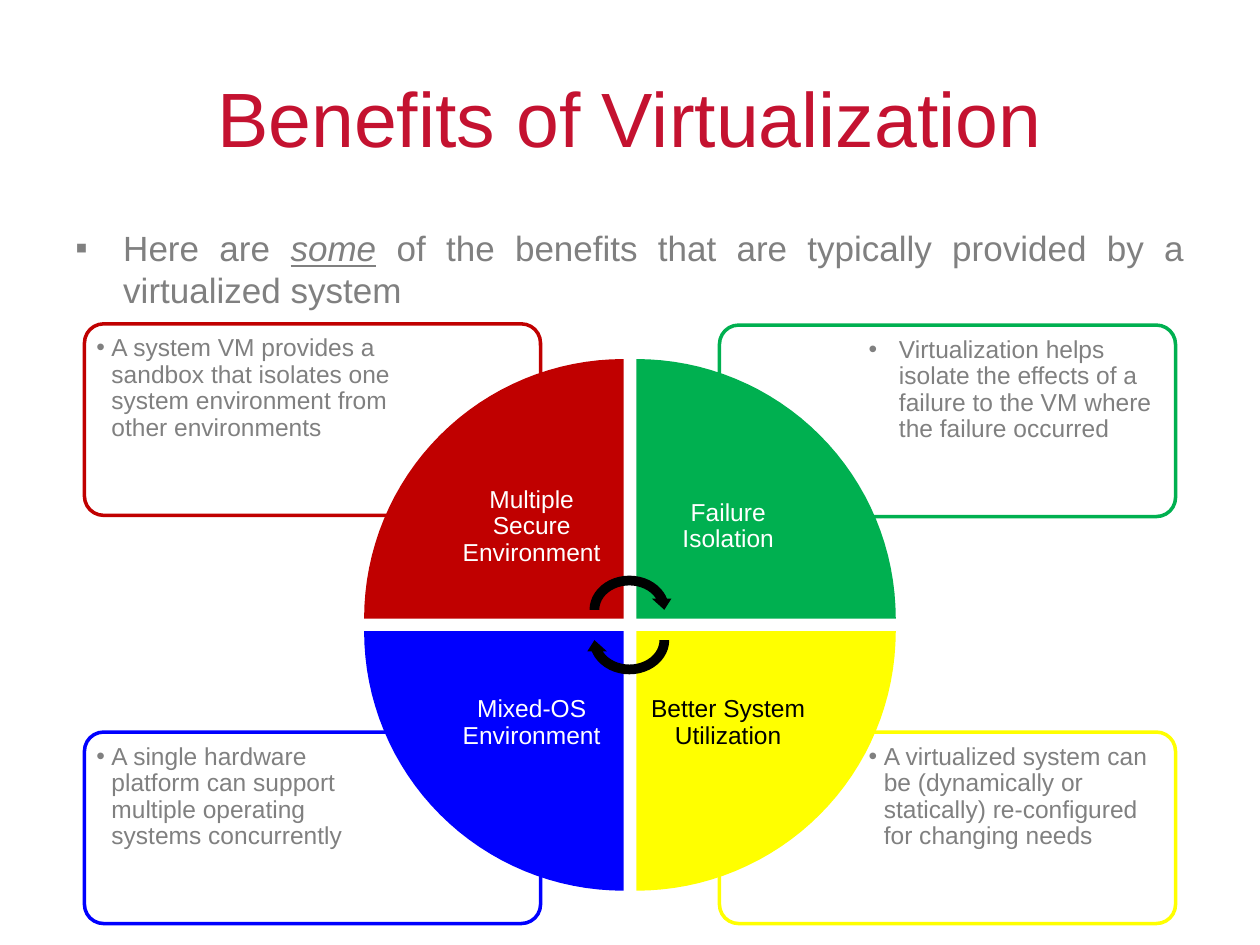
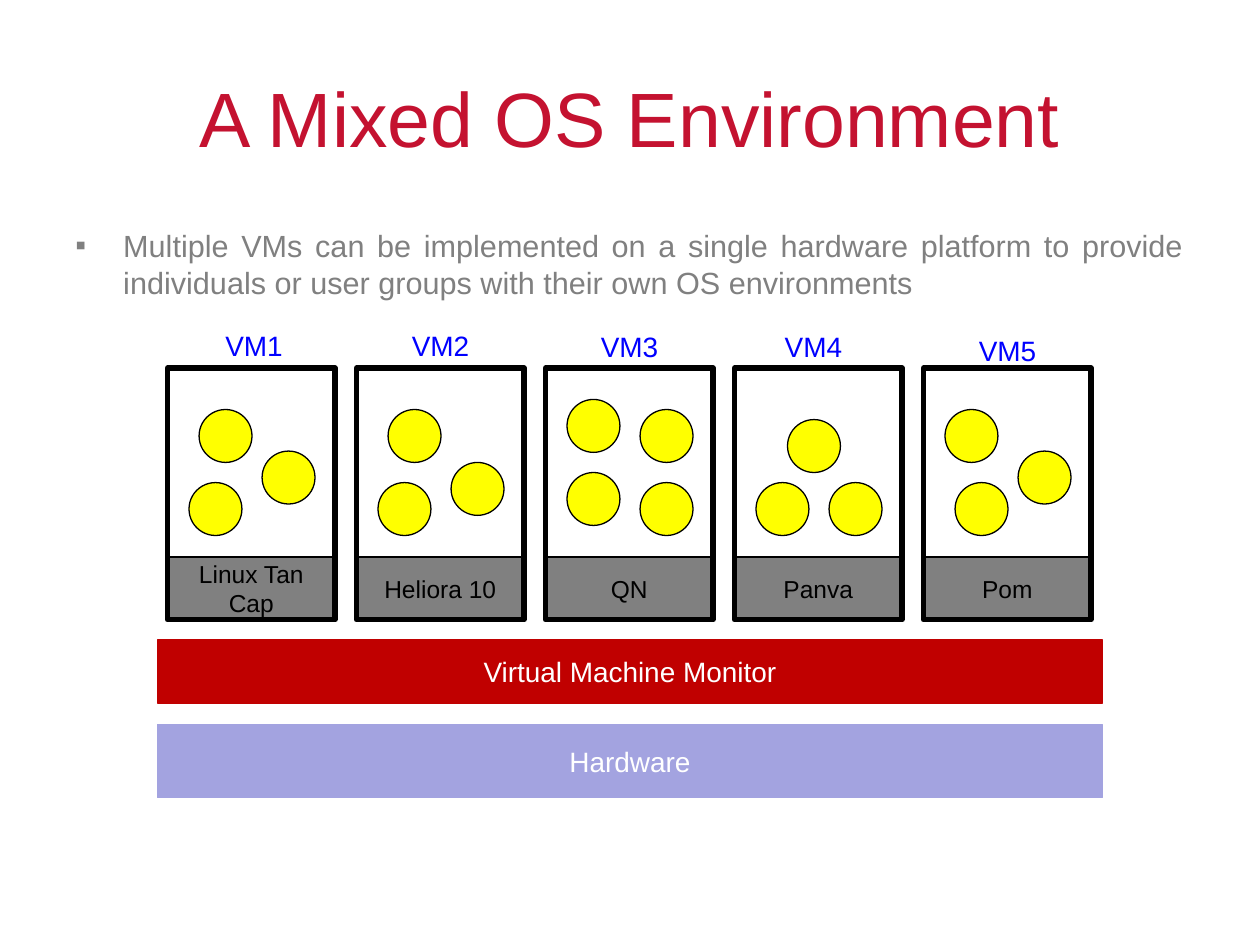
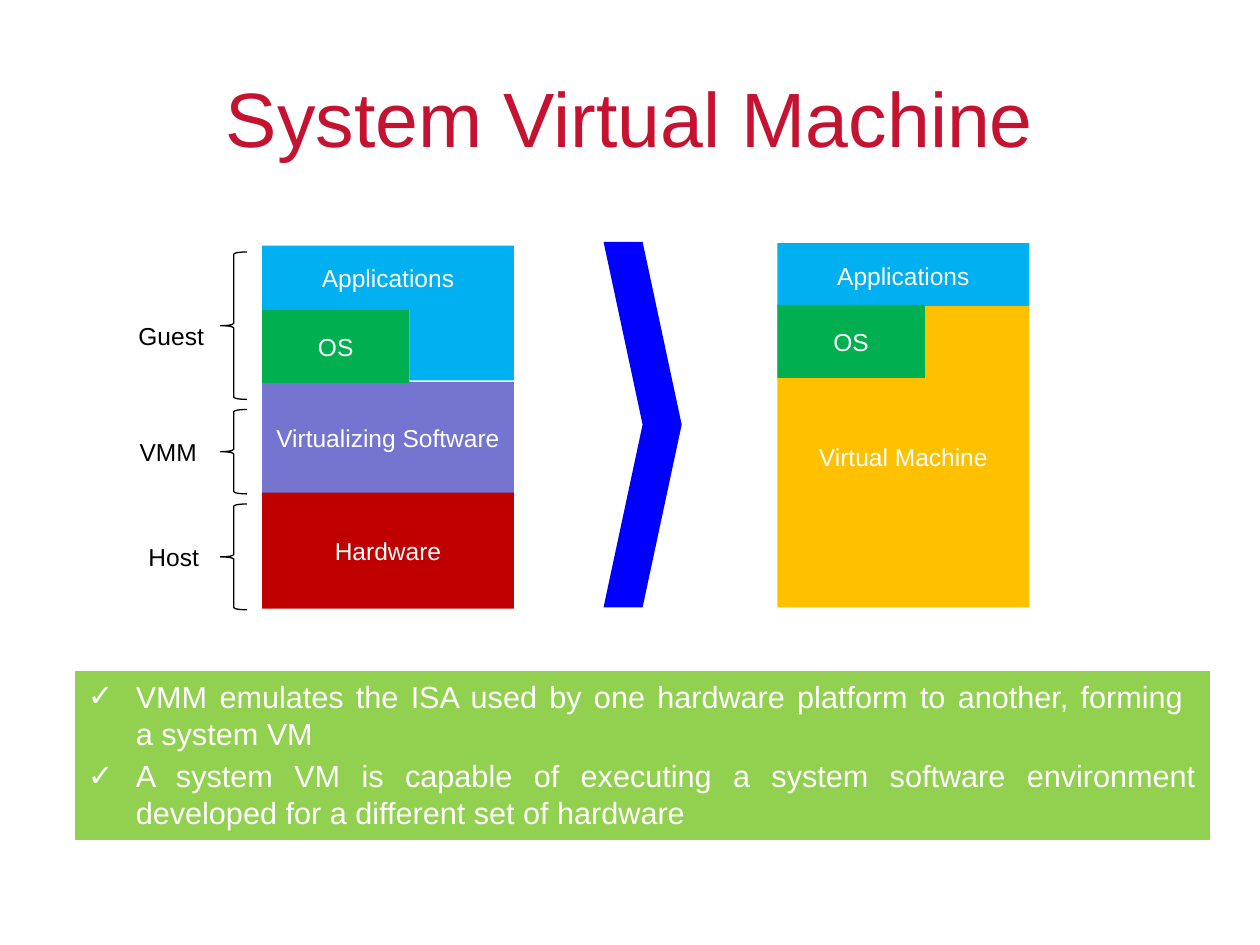
from dataclasses import dataclass
from math import cos, pi, sin

from lxml.etree import SubElement
from pptx import Presentation
from pptx.dml.color import RGBColor
from pptx.enum.shapes import MSO_SHAPE as Preset
from pptx.enum.text import MSO_ANCHOR as Anchor, PP_ALIGN as Align
from pptx.oxml.ns import qn
from pptx.util import Inches, Pt


@dataclass(frozen=True)
class Theme:
    font: str = "Arial"
    title: str = "C41230"
    gray: str = "808080"
    black: str = "000000"
    white: str = "FFFFFF"
    red: str = "C00000"
    green: str = "00B050"
    blue: str = "0000FF"
    yellow: str = "FFFF00"
    sky: str = "00B0F0"
    lavender: str = "A3A3E0"
    violet: str = "7575D1"
    amber: str = "FFC000"
    lime: str = "92D050"
    title_size: float = 44
    intro_size: float = 20
    body_size: float = 17.5
    layer_size: float = 16
    label_size: float = 14


theme = Theme()


def write(box, text, size=theme.label_size, color=theme.white, align=Align.CENTER,
          anchor=Anchor.MIDDLE, insets=(0.1, 0.05, 0.1, 0.05), wrap=True,
          bullet=None, indent=0.38, spacing=None, gap=0):
    frame = box.text_frame
    frame.word_wrap = wrap
    frame.vertical_anchor = anchor
    frame.margin_left, frame.margin_top, frame.margin_right, frame.margin_bottom = map(Inches, insets)
    for number, content in enumerate([text] if isinstance(text, str) else text):
        para = frame.add_paragraph() if number else frame.paragraphs[0]
        para.alignment = align
        if spacing:
            para.line_spacing = spacing
        if number:
            para.space_before = Pt(gap)
        if bullet:
            properties = para._p.get_or_add_pPr()
            properties.set("marL", str(Inches(indent)))
            properties.set("indent", str(-Inches(indent)))
            SubElement(properties, qn("a:buFont"), typeface=theme.font)
            SubElement(properties, qn("a:buChar"), char=bullet)
        for row, line in enumerate(content.split("\n")):
            if row:
                para.add_line_break()
            for index, piece in enumerate(line.split("_")):
                span = para.add_run()
                span.text = piece
                span.font.name = theme.font
                span.font.size = Pt(size)
                span.font.color.rgb = RGBColor.from_string(color)
                if index % 2:
                    span.font.italic = span.font.underline = True


def paint(shape, fill=None, line=None, width=0.75):
    shape.shadow.inherit = False
    if fill:
        shape.fill.solid()
        shape.fill.fore_color.rgb = RGBColor.from_string(fill)
    else:
        shape.fill.background()
    if line:
        shape.line.color.rgb = RGBColor.from_string(line)
        shape.line.width = Pt(width)
    else:
        shape.line.fill.background()
    return shape


deck = Presentation()
deck.slide_width, deck.slide_height = Inches(10), Inches(7.5)
pages = []
for title in ("Benefits of Virtualization", "A Mixed OS Environment", "System Virtual Machine"):
    page = deck.slides.add_slide(deck.slide_layouts[6])
    box = page.shapes.add_textbox(*map(Inches, (0.5, 0.3, 9, 1.25)))
    write(box, title, size=theme.title_size, color=theme.title)
    pages.append(page)
benefits, mixed, system = pages

intros = [
    (benefits, "Here are _some_ of the benefits that are typically provided by a virtualized system",
     theme.intro_size),
    (mixed, "Multiple VMs can be implemented on a single hardware platform to provide "
     "individuals or user groups with their own OS environments", theme.body_size),
]
for page, text, size in intros:
    box = page.shapes.add_textbox(*map(Inches, (0.5, 1.75, 9, 0.75)))
    write(box, text, size=size, color=theme.gray, align=Align.JUSTIFY, anchor=Anchor.TOP, bullet="▪")

center_x, center_y, radius, half_gap, steps = 5, 4.96, 2.06, 0.05, 32
quadrants = [
    (1, 1, theme.yellow, theme.black, "Better System Utilization", 5.81, 0.12,
     "A virtualized system can be (dynamically or statically) re-configured for changing needs"),
    (-1, 1, theme.blue, theme.white, "Mixed-OS Environment", 5.81, 0.12,
     "A single hardware platform can support multiple operating systems concurrently"),
    (1, -1, theme.green, theme.white, "Failure Isolation", 2.58, 0.24,
     "Virtualization helps isolate the effects of a failure to the VM where the failure occurred"),
    (-1, -1, theme.red, theme.white, "Multiple Secure Environment", 2.57, 0.12,
     "A system VM provides a sandbox that isolates one system environment from other environments"),
]
for side, level, color, label_color, label, top, indent, detail in quadrants:
    left = 5.71 if side > 0 else 0.67
    card = benefits.shapes.add_shape(Preset.ROUNDED_RECTANGLE, *map(Inches, (left, top, 3.62, 1.52)))
    card.adjustments[0] = 0.1
    paint(card, line=color, width=2)
    insets = (1.14, 0.05, 0.05, 0.05) if side > 0 else (0.05, 0.05, 1.14, 0.05)
    write(card, detail, color=theme.gray, align=Align.LEFT, anchor=Anchor.TOP,
          insets=insets, bullet="•", indent=indent, spacing=0.9)

for side, level, color, label_color, label, top, indent, detail in quadrants:
    corner_x, corner_y = center_x + side * half_gap, center_y + level * half_gap
    angles = [pi / 2 * step / steps for step in range(steps + 1)]
    arc = [(Inches(corner_x + side * radius * cos(angle)),
            Inches(corner_y + level * radius * sin(angle))) for angle in angles]
    outline = benefits.shapes.build_freeform(Inches(corner_x), Inches(corner_y))
    outline.add_line_segments(arc, close=True)
    wedge = paint(outline.convert_to_shape(), fill=color)
    inner, outer = 0.11, 0.71
    horizontal = (inner, outer) if side > 0 else (outer, inner)
    vertical = (inner, outer) if level > 0 else (outer, inner)
    write(wedge, label, color=label_color, spacing=0.9,
          insets=(horizontal[0], vertical[0], horizontal[1], vertical[1]))

for top, rotation in ((4.53, 0), (4.77, 180)):
    arrow = benefits.shapes.add_shape(Preset.CIRCULAR_ARROW, *map(Inches, (4.64, top, 0.71, 0.62)))
    arrow.rotation = rotation
    paint(arrow, fill=theme.black)

for top, height, color, label in ((5.75, 0.58, theme.lavender, "Hardware"),
                                  (5.08, 0.5, theme.red, "Virtual Machine Monitor")):
    layer = mixed.shapes.add_shape(Preset.RECTANGLE, *map(Inches, (1.25, top, 7.5, height)))
    write(paint(layer, fill=color, line=color), label, size=theme.layer_size)

machines = [
    ("Linux Tan Cap", 1.69, 2.56, [(0.25, 3.25), (0.17, 3.83), (0.75, 3.58)]),
    ("Heliora 10", 3.17, 2.56, [(0.25, 3.25), (0.75, 3.67), (0.17, 3.83)]),
    ("QN", 4.67, 2.57, [(0.17, 3.17), (0.75, 3.25), (0.17, 3.75), (0.75, 3.83)]),
    ("Panva", 6.13, 2.57, [(0.42, 3.33), (0.17, 3.83), (0.75, 3.83)]),
    ("Pom", 7.67, 2.6, [(0.17, 3.25), (0.75, 3.58), (0.25, 3.83)]),
]
for index, (name, label_left, label_top, processes) in enumerate(machines):
    left = 1.33 + 1.5 * index
    for top, height, fill, width, text in ((4.42, 0.5, theme.gray, 1.5, name),
                                           (2.92, 1.5, theme.white, 1.5, None),
                                           (2.92, 2, None, 3, None)):
        part = mixed.shapes.add_shape(Preset.RECTANGLE, *map(Inches, (left, top, 1.33, height)))
        paint(part, fill=fill, line=theme.black, width=width)
        if text:
            write(part, text, color=theme.black)
    for offset, top in processes:
        process = mixed.shapes.add_shape(Preset.OVAL, *map(Inches, (left + offset, top, 0.42, 0.42)))
        paint(process, fill=theme.yellow, line=theme.black)
    label = mixed.shapes.add_textbox(*map(Inches, (label_left, label_top, 0.66, 0.37)))
    write(label, f"VM{index + 1}", size=theme.layer_size, color=theme.blue,
          align=Align.LEFT, anchor=Anchor.TOP, wrap=False)

summary = system.shapes.add_shape(Preset.RECTANGLE, *map(Inches, (0.6, 5.33, 9, 1.33)))
paint(summary, fill=theme.lime, line=theme.lime)
write(summary, [
    "VMM emulates the ISA used by one hardware platform to another, forming \na system VM",
    "A system VM is capable of executing a system software environment "
    "developed for a different set of hardware",
], size=theme.body_size, align=Align.JUSTIFY, anchor=Anchor.TOP, bullet="✓", gap=3.5)

for name, left, label_top, width, top, height in (("Guest", 1, 2.5, 0.72, 2, 1.17),
                                                  ("VMM", 1.01, 3.42, 0.66, 3.25, 0.67),
                                                  ("Host", 1.08, 4.25, 0.61, 4, 0.84)):
    brace = system.shapes.add_shape(Preset.LEFT_BRACE, *map(Inches, (1.75, top, 0.21, height)))
    paint(brace, line=theme.black)
    label = system.shapes.add_textbox(*map(Inches, (left, label_top, width, 0.34)))
    write(label, name, color=theme.black, align=Align.LEFT, anchor=Anchor.TOP, wrap=False)

blocks = [
    (2.08, 1.95, 2, 0.51, theme.sky, "Applications"),
    (2.08, 3.03, 2, 0.89, theme.violet, "Virtualizing Software"),
    (3.25, 2.44, 0.83, 0.58, theme.sky, None),
    (2.08, 2.46, 1.17, 0.58, theme.green, "OS"),
    (2.08, 3.91, 2, 0.92, theme.red, "Hardware"),
    (6.17, 1.93, 2, 0.51, theme.sky, "Applications"),
    (6.17, 2.43, 2, 2.39, theme.amber, "Virtual Machine"),
    (6.17, 2.42, 1.17, 0.58, theme.green, "OS"),
]
for left, top, width, height, color, name in blocks:
    block = system.shapes.add_shape(Preset.RECTANGLE, *map(Inches, (left, top, width, height)))
    paint(block, fill=color)
    if name:
        write(block, name)

chevron = system.shapes.add_shape(Preset.CHEVRON, *map(Inches, (4.79, 1.92, 0.62, 2.9)))
paint(chevron, fill=theme.blue)

deck.save("out.pptx")
